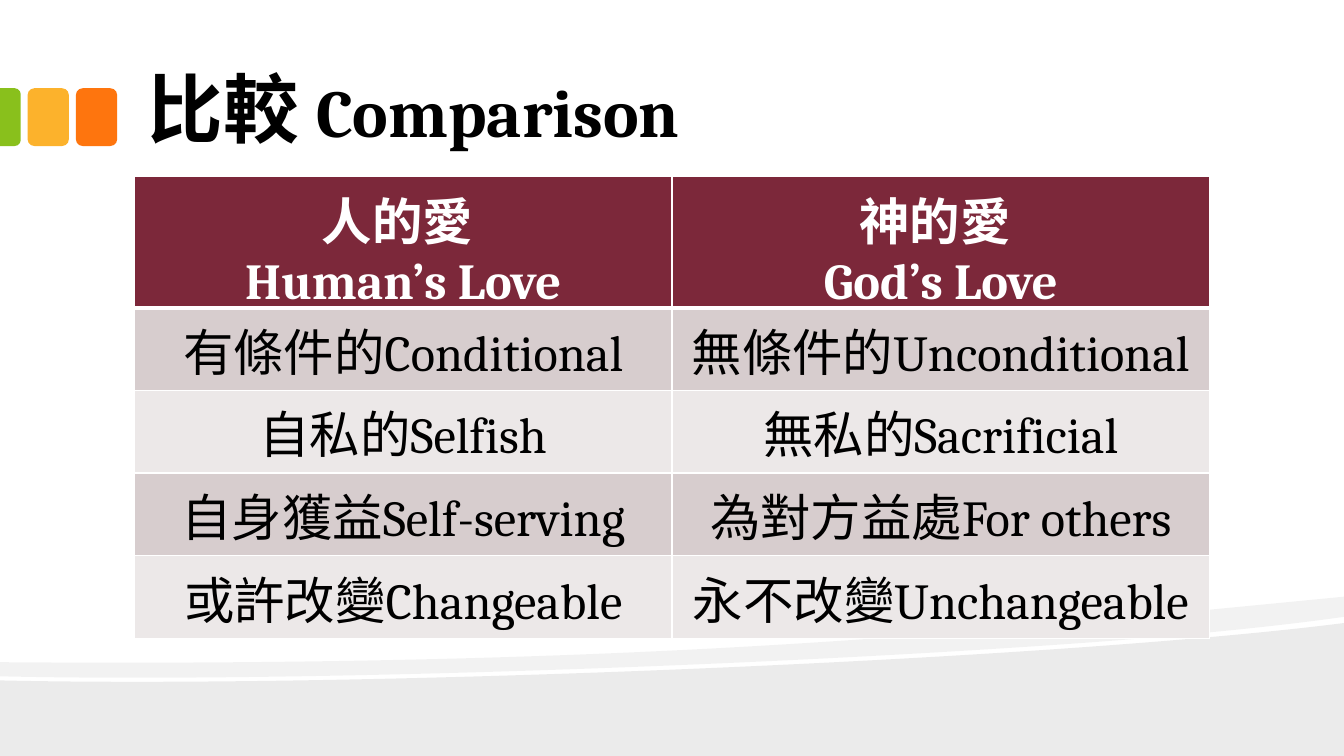
from lxml import etree
from pptx import Presentation
from pptx.dml.color import RGBColor
from pptx.enum.shapes import MSO_SHAPE
from pptx.enum.text import MSO_ANCHOR, PP_ALIGN
from pptx.oxml.ns import qn
from pptx.util import Pt

ROUNDED = MSO_SHAPE.ROUNDED_RECTANGLE
ROUNDED_TOP = MSO_SHAPE.ROUND_2_SAME_RECTANGLE
BOTTOM = MSO_ANCHOR.BOTTOM
CENTER = PP_ALIGN.CENTER

BLACK = RGBColor(0x00, 0x00, 0x00)
WHITE = RGBColor(0xFF, 0xFF, 0xFF)
ORANGE = RGBColor(0xFE, 0x75, 0x0E)
YELLOW = RGBColor(0xFC, 0xB2, 0x2C)
GREEN = RGBColor(0x89, 0xC0, 0x1C)
MAROON = RGBColor(0x7C, 0x28, 0x3A)
ROSE = RGBColor(0xD7, 0xCD, 0xCE)
PALE_ROSE = RGBColor(0xEC, 0xE8, 0xE8)

FONT = "Cambria"
WIDTH, HEIGHT = 960, 540
LEFT_MARGIN, CONTENT_WIDTH = 96, 768

COMPARISON = [
    ("人的愛 \nHuman’s Love", "神的愛 \nGod’s Love"),
    ("有條件的Conditional", "無條件的Unconditional"),
    ("自私的Selfish", "無私的Sacrificial"),
    ("自身獲益Self-serving", "為對方益處For others"),
    ("或許改變Changeable", "永不改變Unchangeable"),
]


def add_text(paragraph, text, size=36, color=BLACK, bold=False):
    run = paragraph.add_run()
    run.text = text
    run.font.name = FONT
    run.font.size = Pt(size)
    run.font.color.rgb = color
    run.font.bold = bold


def paint(shape, color):
    shape.shadow.inherit = False
    shape.fill.solid()
    shape.fill.fore_color.rgb = color
    shape.line.fill.background()


def add_wave(slide, points, curve_starts, opacity):
    """Draw a closed black outline whose opacity is given in percent.

    Each index in curve_starts marks the first of three points
    (two controls and an end) that form a cubic curve.
    """
    outline = [(Pt(x), Pt(y)) for x, y in points]
    builder = slide.shapes.build_freeform(*outline[0], scale=1.0)
    builder.add_line_segments(outline[1:], close=True)
    wave = builder.convert_to_shape()
    paint(wave, BLACK)

    segments = wave._element.spPr.find(".//" + qn("a:path"))
    for start in sorted(curve_starts, reverse=True):
        lines = segments[start:start + 3]
        curve = etree.Element(qn("a:cubicBezTo"))
        for line in lines:
            curve.append(line[0])
            segments.remove(line)
        segments.insert(start, curve)

    color = wave._element.spPr.find(qn("a:solidFill"))[0]
    etree.SubElement(color, qn("a:alpha"), val=str(opacity * 1000))


def add_waves(slide):
    ground = [(WIDTH, 445), (WIDTH, HEIGHT), (0, HEIGHT), (0, 486),
              (253.4, 491.8), (750.2, 471.6), (WIDTH, 445)]
    add_wave(slide, ground, [4], 8)

    band = [(WIDTH, 426.2), (WIDTH, 440.6),
            (903.6, 448.6), (827.3, 455.8), (740.9, 461.5),
            (502.6, 477.4), (185.8, 487.4), (0, 483.1), (0, 473),
            (469.4, 476.6), (699.1, 451.4), (WIDTH, 426.2)]
    add_wave(slide, band, [2, 5, 9], 5)


def add_tabs(slide):
    top, width, height = 63, 29.5, 41.3
    for left, color in ((54.2, ORANGE), (19.7, YELLOW)):
        tab = slide.shapes.add_shape(
            ROUNDED, Pt(left), Pt(top), Pt(width), Pt(height))
        paint(tab, color)

    edge_width = 14.8
    shift = (height - edge_width) / 2
    edge_tab = slide.shapes.add_shape(
        ROUNDED_TOP, Pt(-shift), Pt(top + shift), Pt(height), Pt(edge_width))
    edge_tab.rotation = 90
    edge_tab.adjustments[0] = 0.29
    paint(edge_tab, GREEN)


def add_title(slide):
    box = slide.shapes.add_textbox(
        Pt(LEFT_MARGIN), Pt(12.2), Pt(CONTENT_WIDTH), Pt(102.2))
    frame = box.text_frame
    frame.word_wrap = True
    frame.vertical_anchor = BOTTOM
    frame.margin_left = frame.margin_right = Pt(9.6)
    frame.margin_top = frame.margin_bottom = Pt(4.8)
    paragraph = frame.paragraphs[0]
    paragraph.line_spacing = 0.9
    add_text(paragraph, "比較 ", size=54, bold=True)
    add_text(paragraph, "Comparison", size=48, bold=True)


def set_borders(cell, **widths):
    """Give the named sides (L, R, T, B) white lines of these widths."""
    properties = cell._tc.get_or_add_tcPr()
    for index, (side, width) in enumerate(widths.items()):
        line = etree.Element(qn(f"a:ln{side}"), w=str(Pt(width)))
        fill = etree.SubElement(line, qn("a:solidFill"))
        etree.SubElement(fill, qn("a:srgbClr"), val=str(WHITE))
        properties.insert(index, line)


def fill_cell(cell, text, background, is_header, top_border):
    cell.fill.solid()
    cell.fill.fore_color.rgb = background
    set_borders(cell, L=1, R=1, T=top_border, B=3 if is_header else 1)
    frame = cell.text_frame
    for index, line in enumerate(text.split("\n")):
        paragraph = frame.add_paragraph() if index else frame.paragraphs[0]
        paragraph.alignment = CENTER
        add_text(paragraph, line, color=WHITE if is_header else BLACK,
                 bold=is_header)


def add_comparison_table(slide):
    table = slide.shapes.add_table(
        len(COMPARISON), len(COMPARISON[0]), Pt(LEFT_MARGIN), Pt(126.2),
        Pt(CONTENT_WIDTH), Pt(295)).table
    for row_index, texts in enumerate(COMPARISON):
        is_header = row_index == 0
        background = MAROON if is_header else (PALE_ROSE, ROSE)[row_index % 2]
        for column_index, text in enumerate(texts):
            fill_cell(table.cell(row_index, column_index), text, background,
                      is_header, top_border=3 if row_index == 1 else 1)


def main():
    presentation = Presentation()
    presentation.slide_width = Pt(WIDTH)
    presentation.slide_height = Pt(HEIGHT)
    slide = presentation.slides.add_slide(presentation.slide_layouts[6])
    add_waves(slide)
    add_tabs(slide)
    add_title(slide)
    add_comparison_table(slide)
    presentation.save("out.pptx")


if __name__ == "__main__":
    main()
